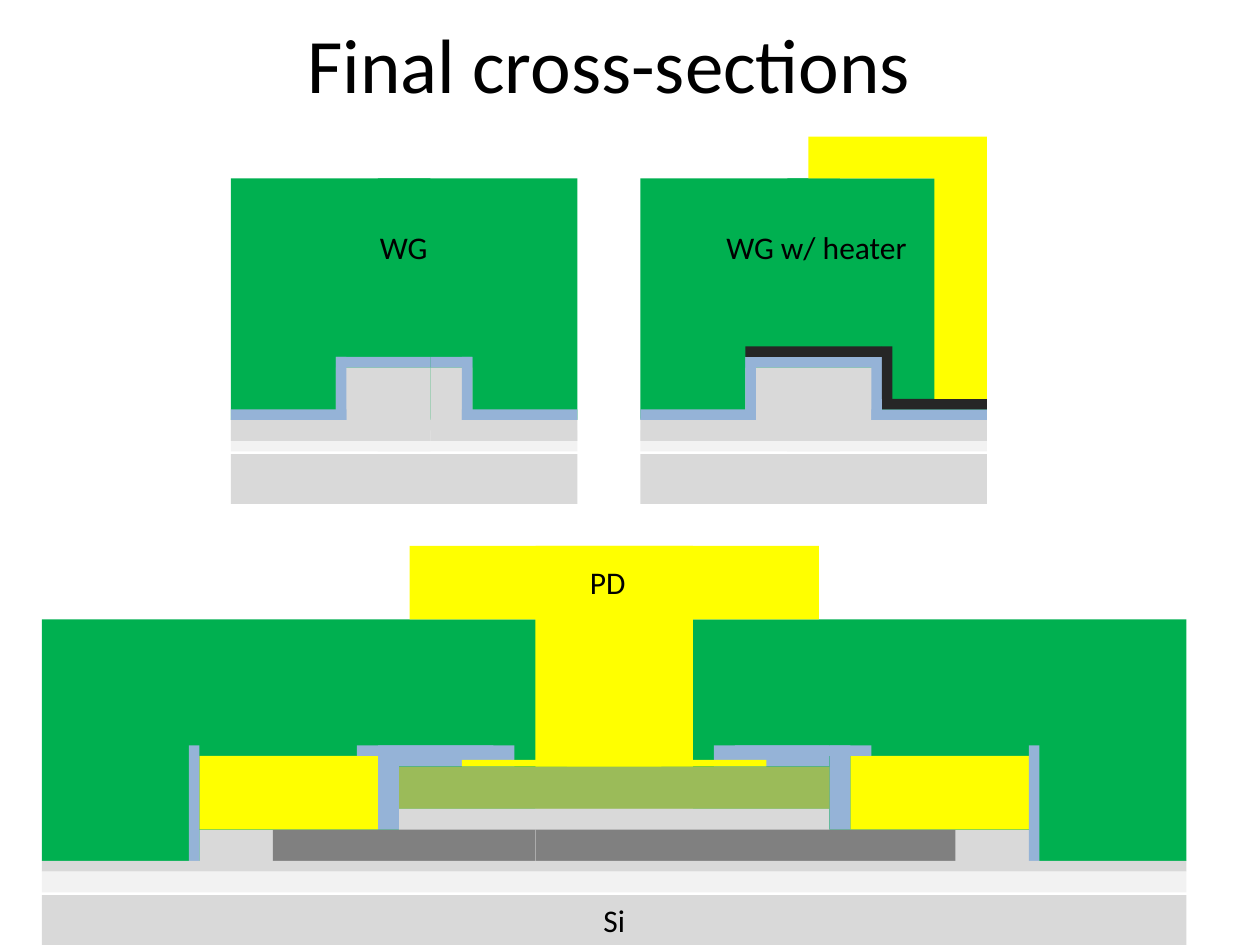
from dataclasses import dataclass

from pptx import Presentation
from pptx.dml.color import RGBColor
from pptx.enum.shapes import MSO_SHAPE
from pptx.enum.text import MSO_ANCHOR, MSO_AUTO_SIZE, PP_ALIGN
from pptx.util import Emu, Pt

RECT = MSO_SHAPE.RECTANGLE
SNIP = MSO_SHAPE.SNIP_2_SAME_RECTANGLE
MIDDLE = MSO_ANCHOR.MIDDLE
GROW = MSO_AUTO_SIZE.SHAPE_TO_FIT_TEXT
LEFT, CENTER = PP_ALIGN.LEFT, PP_ALIGN.CENTER
EMU_PER_PX = 9525


@dataclass(frozen=True)
class Theme:
    """Colours and type sizes of the slide."""
    font: str = "Calibri"
    title_size: int = 44
    label_size: int = 18
    text: str = "000000"
    cladding: str = "00B050"
    silicon: str = "D9D9D9"
    oxide: str = "F2F2F2"
    liner: str = "95B3D7"
    heater: str = "262626"
    metal: str = "FFFF00"
    doped: str = "808080"
    absorber: str = "9BBB59"


THEME = Theme()

WAVEGUIDE_RIGHT_HALF = [
    (-20, 136, 152, 184, THEME.cladding),
    (-20, 280, 72, 48, THEME.silicon),
    (-20, 346, 152, 38, THEME.silicon),
    (-20, 328, 152, 16, THEME.oxide),
    (-20, 319, 152, 17, THEME.silicon),
    (44, 272, 8, 48, THEME.liner),
    (-20, 272, 72, 8, THEME.liner),
    (44, 312, 88, 8, THEME.liner),
]
HEATER = [
    (568, 264, 104, 8, THEME.heater),
    (672, 304, 80, 8, THEME.heater),
    (672, 264, 8, 40, THEME.heater),
    (712, 120, 40, 184, THEME.metal),
    (616, 104, 136, 32, THEME.metal),
]
DETECTOR_LEFT_HALF = [
    (-316, 632, 376, 24, THEME.silicon),
    (-164, 616, 224, 40, THEME.silicon),
    (-260, 632, 320, 24, THEME.doped),
    (-164, 584, 224, 32, THEME.absorber, SNIP),
    (-164, 568, 88, 16, THEME.liner),
    (-116, 579, 176, 5, THEME.metal),
    (-316, 576, 136, 56, THEME.metal),
    (-180, 568, 16, 64, THEME.liner),
    (-196, 568, 104, 8, THEME.liner),
    (-324, 568, 8, 88, THEME.liner),
    (-36, 448, 96, 136, THEME.metal),
    (-156, 416, 216, 56, THEME.metal),
]


def px(n):
    """Turn pixels into EMU."""
    return Emu(n * EMU_PER_PX)


def add_layer(shapes, x, y, w, h, color, kind=RECT):
    """Add one plain filled layer."""
    sp = shapes.add_shape(kind, px(x), px(y), px(w), px(h))
    sp.shadow.inherit = False
    sp.fill.solid()
    sp.fill.fore_color.rgb = RGBColor.from_string(color)
    sp.line.fill.background()
    if kind == SNIP:
        sp.adjustments[0] = sp.adjustments[1] = 0
    return sp


def add_mirrored(shapes, center, half):
    """Group a half section with its mirror image about the centre line."""
    group = shapes.add_group_shape().shapes
    for dx, *rest in half:
        add_layer(group, center + dx, *rest)
    for dx, y, w, *rest in half:
        add_layer(group, center - dx - w, y, w, *rest)


def write(tf, text, size, align):
    """Write one run of text in the theme font."""
    p = tf.paragraphs[0]
    p.alignment = align
    r = p.add_run()
    r.text = text
    r.font.name = THEME.font
    r.font.size = Pt(size)
    r.font.color.rgb = RGBColor.from_string(THEME.text)


def add_label(shapes, x, y, w, text):
    """Add a section label."""
    tf = shapes.add_textbox(px(x), px(y), px(w), px(38)).text_frame
    tf.word_wrap = True
    tf.auto_size = GROW
    write(tf, text, THEME.label_size, LEFT)


def set_title(title, text):
    """Place and format the slide title."""
    title.left, title.top, title.width, title.height = map(px, (32, 0, 864, 96))
    title.text_frame.vertical_anchor = MIDDLE
    write(title.text_frame, text, THEME.title_size, CENTER)


def add_waveguides(shapes):
    """Draw the plain waveguide and the one with a heater."""
    add_mirrored(shapes, 308, WAVEGUIDE_RIGHT_HALF)
    add_label(shapes, 280, 169, 152, "WG")
    add_mirrored(shapes, 620, WAVEGUIDE_RIGHT_HALF)
    add_label(shapes, 544, 169, 192, "WG w/ heater")
    for layer in HEATER:
        add_layer(shapes, *layer)


def add_detector(shapes):
    """Draw the photodetector on its substrate."""
    add_mirrored(shapes, 468, DETECTOR_LEFT_HALF)
    substrate = add_layer(shapes, 32, 682, 872, 38, THEME.silicon)
    substrate.text_frame.auto_size = GROW
    write(substrate.text_frame, "Si", THEME.label_size, CENTER)
    add_layer(shapes, 32, 664, 872, 16, THEME.oxide)
    add_layer(shapes, 32, 656, 872, 8, THEME.silicon)
    add_label(shapes, 440, 424, 152, "PD")


def main():
    """Build and save the slide."""
    prs = Presentation()
    prs.slide_width, prs.slide_height = px(960), px(720)
    s = prs.slides.add_slide(prs.slide_layouts[5])
    set_title(s.shapes.title, "Final cross-sections")
    add_layer(s.shapes, 32, 472, 872, 184, THEME.cladding)
    add_waveguides(s.shapes)
    add_detector(s.shapes)
    prs.save("out.pptx")


if __name__ == "__main__":
    main()
